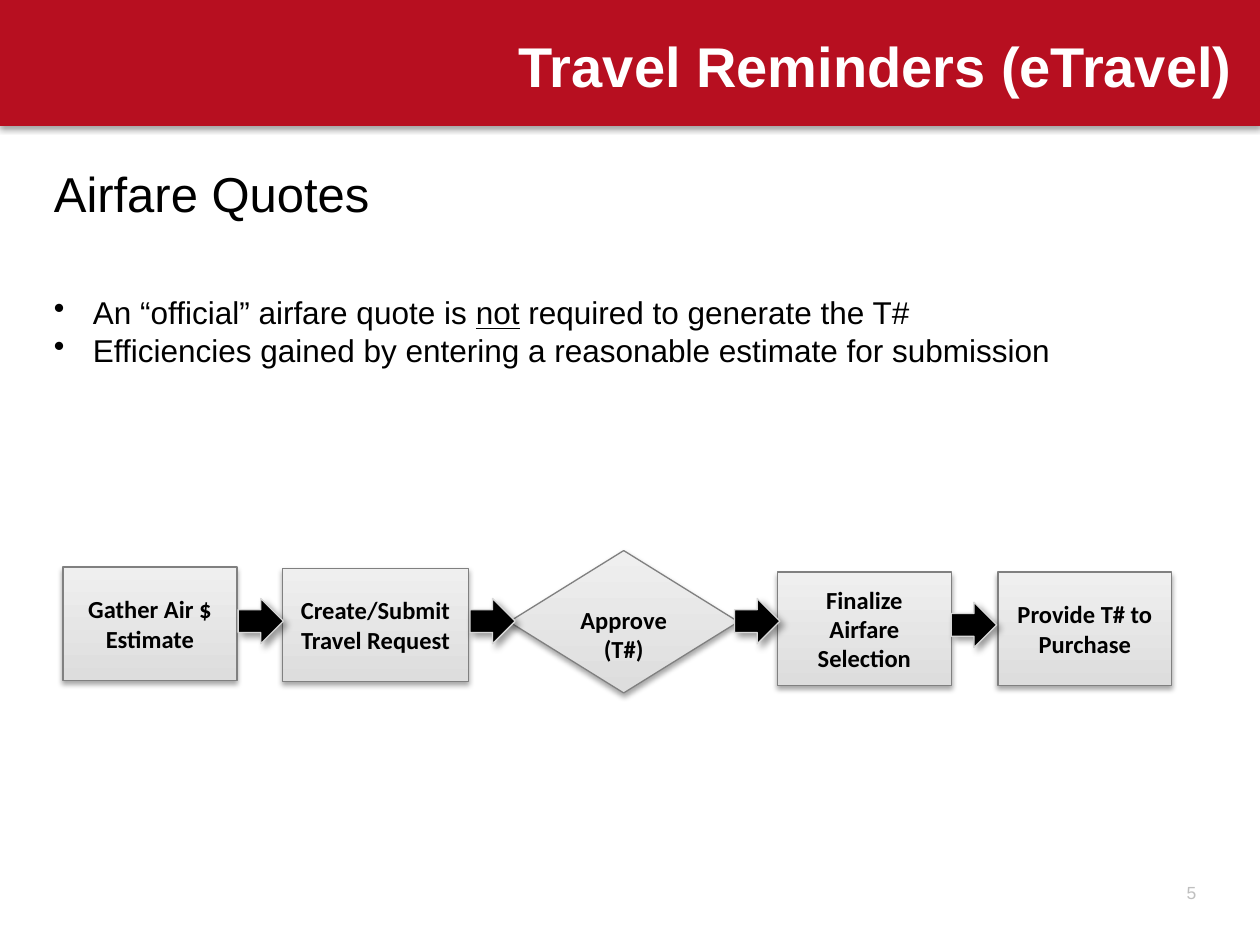
from lxml import etree
from pptx import Presentation
from pptx.dml.color import RGBColor
from pptx.enum.shapes import MSO_SHAPE
from pptx.enum.text import MSO_ANCHOR, PP_ALIGN
from pptx.oxml import parse_xml
from pptx.oxml.ns import nsdecls, qn
from pptx.util import Inches, Pt

RECTANGLE = MSO_SHAPE.RECTANGLE
PROCESS = MSO_SHAPE.FLOWCHART_PROCESS
DECISION = MSO_SHAPE.FLOWCHART_DECISION
ARROW = MSO_SHAPE.RIGHT_ARROW
MIDDLE = MSO_ANCHOR.MIDDLE
LEFT, CENTER, RIGHT = PP_ALIGN.LEFT, PP_ALIGN.CENTER, PP_ALIGN.RIGHT

RED = RGBColor(0xB7, 0x0F, 0x20)
WHITE = RGBColor(0xFF, 0xFF, 0xFF)
BLACK = RGBColor(0, 0, 0)
PAGE_GRAY = RGBColor(0xBF, 0xBF, 0xBF)
EDGE_GRAY = RGBColor(0x80, 0x80, 0x80)
ARROW_EDGE = RGBColor(0xD8, 0xD8, 0xD8)
STEP_STOPS = (RGBColor(0xDD, 0xDD, 0xDD), RGBColor(0xEF, 0xEF, 0xEF))

# Opacity in percent, blur and distance in points, direction in degrees
SOFT_SHADOW = (35, 3.1, 1.8, 90)
ARROW_SHADOW = (40, 4, 3, 45)

TITLE = {"name": "Arial", "size": Pt(32), "bold": True, "color": WHITE}
HEADING = {"name": "Arial", "size": Pt(28), "color": BLACK}
BODY = {"name": "Arial", "size": Pt(18), "color": BLACK}
STEP = {"name": "Calibri", "size": Pt(14), "bold": True, "color": BLACK}
NUMBER = {"name": "Arial", "size": Pt(10), "color": PAGE_GRAY}

BULLETS = [
    [("An “official” airfare quote is ", False), ("not", True),
     (" required to generate the T#", False)],
    [("Efficiencies gained by entering a reasonable estimate for submission", False)],
]
STEPS = [
    (PROCESS, (0.5, 4.5, 1.38, 0.9), ["Gather Air $ Estimate"]),
    (PROCESS, (2.24, 4.51, 1.48, 0.9), ["Create/Submit Travel Request"]),
    (DECISION, (4.04, 4.37, 1.82, 1.13), ["Approve", "(T#)"]),
    (PROCESS, (6.17, 4.54, 1.38, 0.9), ["Finalize Airfare Selection"]),
    (PROCESS, (7.92, 4.54, 1.38, 0.9), ["Provide T# to Purchase"]),
]
ARROW_SIZE = 0.36
ARROW_SPOTS = [(1.89, 4.75), (3.73, 4.75), (5.83, 4.75), (7.55, 4.78)]


def add_span(para, text, style, underline=False):
    span = para.add_run()
    span.text = text
    for key, value in style.items():
        if key == "color":
            span.font.color.rgb = value
        else:
            setattr(span.font, key, value)
    if underline:
        span.font.underline = True


def add_shadow(shape, shadow):
    opacity, blur, distance, direction = shadow
    shape.shadow.inherit = False
    effects = shape._element.spPr.find(qn("a:effectLst"))
    effects.append(parse_xml(
        f'<a:outerShdw {nsdecls("a")} blurRad="{Pt(blur)}" dist="{Pt(distance)}" '
        f'dir="{direction * 60000}" algn="ctr" rotWithShape="0">'
        f'<a:srgbClr val="000000"><a:alpha val="{opacity * 1000}"/></a:srgbClr>'
        '</a:outerShdw>'))


def add_figure(page, kind, box, shadow, edge=None):
    shape = page.shapes.add_shape(kind, *map(Inches, box))
    if edge is None:
        shape.line.fill.background()
    else:
        shape.line.color.rgb = edge
        shape.line.width = Pt(0.75)
    add_shadow(shape, shadow)
    return shape


def add_text(page, box, text, style, align=LEFT, wrap=True):
    frame = page.shapes.add_textbox(*map(Inches, box)).text_frame
    frame.word_wrap = wrap
    para = frame.paragraphs[0]
    para.alignment = align
    add_span(para, text, style)


def add_banner(page, box):
    band = add_figure(page, RECTANGLE, box, SOFT_SHADOW)
    band.fill.solid()
    band.fill.fore_color.rgb = RED
    add_text(page, (3.5, 0.2, 6.38, 1.11), "Travel Reminders (eTravel)", TITLE, RIGHT)


def add_bullets(page, box):
    frame = page.shapes.add_textbox(*map(Inches, box)).text_frame
    frame.word_wrap = True
    for index, spans in enumerate(BULLETS):
        para = frame.add_paragraph() if index else frame.paragraphs[0]
        settings = para._p.get_or_add_pPr()
        settings.set("marL", str(Inches(0.31)))
        settings.set("indent", str(-Inches(0.31)))
        etree.SubElement(settings, qn("a:buChar")).set("char", "•")
        for text, underline in spans:
            add_span(para, text, BODY, underline)


def add_step(page, kind, box, lines):
    shape = add_figure(page, kind, box, SOFT_SHADOW, EDGE_GRAY)
    shape.fill.gradient()
    shape.fill.gradient_angle = 90
    for position, (stop, color) in enumerate(zip(shape.fill.gradient_stops, STEP_STOPS)):
        stop.position = position
        stop.color.rgb = color
    frame = shape.text_frame
    frame.word_wrap = True
    frame.vertical_anchor = MIDDLE
    if kind == DECISION:
        frame.margin_left = frame.margin_right = frame.margin_bottom = 0
        frame.margin_top = Inches(0.2)
    for index, line in enumerate(lines):
        para = frame.add_paragraph() if index else frame.paragraphs[0]
        para.alignment = CENTER
        add_span(para, line, STEP)


def add_flow(page):
    for kind, box, lines in STEPS:
        add_step(page, kind, box, lines)
    for left, top in ARROW_SPOTS:
        arrow = add_figure(page, ARROW, (left, top, ARROW_SIZE, ARROW_SIZE),
                           ARROW_SHADOW, ARROW_EDGE)
        arrow.fill.solid()
        arrow.fill.fore_color.rgb = BLACK


def main():
    deck = Presentation()
    deck.slide_width, deck.slide_height = Inches(10), Inches(7.5)
    page = deck.slides.add_slide(deck.slide_layouts[6])
    add_banner(page, (0, 0, 10, 1))
    add_text(page, (0.33, 1.25, 9.17, 0.57), "Airfare Quotes", HEADING)
    add_bullets(page, (0.33, 2.28, 9.17, 0.71))
    add_flow(page)
    add_text(page, (9.32, 6.95, 0.37, 0.27), "5", NUMBER, wrap=False)
    deck.save("out.pptx")


if __name__ == "__main__":
    main()
